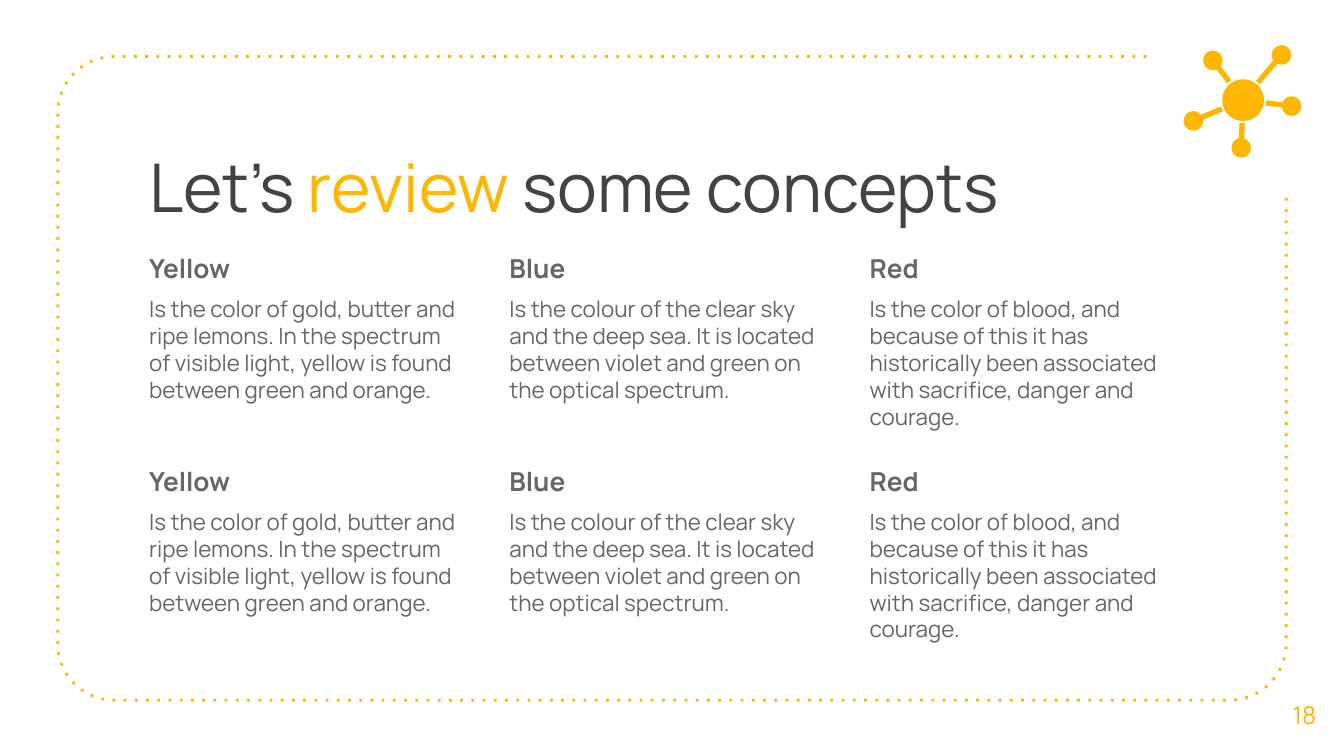
import copy
import math
from dataclasses import dataclass

import pptx
import pptx.dml.color
import pptx.enum.dml
import pptx.enum.text
import pptx.util
from lxml import etree

HUES = {"gold": "FFB600", "dark": "434343", "gray": "666666"}
FONT = "Manrope"
WIDE = pptx.util.Inches(10)
HIGH = WIDE * 9 // 16
CELL = WIDE // 100  # square grid, 100 columns across the slide

Point = tuple[float, float]


@dataclass
class Box:
    """A place in grid columns and rows."""
    col: float
    row: float
    cols: float
    rows: float


@dataclass
class Topic:
    name: str
    text: str


TOPICS = [
    Topic("Yellow", "Is the color of gold, butter and ripe lemons. In the spectrum "
          "of visible light, yellow is found between green and orange."),
    Topic("Blue", "Is the colour of the clear sky and the deep sea. It is located "
          "between violet and green on the optical spectrum."),
    Topic("Red", "Is the color of blood, and because of this it has historically "
          "been associated with sacrifice, danger and courage."),
]
HUB, HUB_R, GAP_R = (92.5, 7.45), 1.55, 1.72
NODES = [(95.35, 4.1), (90.25, 4.5), (88.8, 9), (92.35, 11), (96.1, 7.9)]
NODE_R, STEM = 0.72, 0.2


def tint(hue: str) -> pptx.dml.color.RGBColor:
    return pptx.dml.color.RGBColor.from_string(HUES[hue])


def place(shape, box: Box) -> None:
    shape.left, shape.top = int(box.col * CELL), int(box.row * CELL)
    shape.width, shape.height = int(box.cols * CELL), int(box.rows * CELL)


def setup(shape, box: Box, anchor: str = "TOP"):
    """Place a text shape and return its text frame."""
    place(shape, box)
    frame = shape.text_frame
    frame.word_wrap = True
    frame.auto_size = pptx.enum.text.MSO_AUTO_SIZE.NONE
    frame.vertical_anchor = pptx.enum.text.MSO_ANCHOR[anchor]
    frame.margin_left = frame.margin_right = CELL
    frame.margin_top = frame.margin_bottom = CELL
    return frame


def style(para, size: float, hue: str, bold: bool = False, align: str = "LEFT") -> None:
    para.alignment = pptx.enum.text.PP_ALIGN[align]
    font = para.font
    font.name, font.size, font.bold = FONT, pptx.util.Pt(size), bold
    font.color.rgb = tint(hue)


def arc(mid: Point, r: float, start: float, end: float, steps: int = 16) -> list[Point]:
    """Points on a circle, angles in radians clockwise from the right."""
    turns = [start + (end - start) * i / steps for i in range(steps + 1)]
    return [(mid[0] + r * math.cos(t), mid[1] + r * math.sin(t)) for t in turns]


def trace(slide, points: list[Point], close: bool = True):
    """Draw an outline through points given in grid units."""
    spots = [(x * CELL, y * CELL) for x, y in points]
    pen = slide.shapes.build_freeform(*spots[0])
    pen.add_line_segments(spots[1:], close=close)
    shape = pen.convert_to_shape()
    shape.shadow.inherit = False
    return shape


def blob(slide, points: list[Point]) -> None:
    shape = trace(slide, points)
    shape.fill.solid()
    shape.fill.fore_color.rgb = tint("gold")
    shape.line.fill.background()


def draw_frame(slide) -> None:
    left, top, right, base, r = 4.3, 4.2, 95.7, 52.1, 4.2
    half = math.pi / 2
    points = [(85.3, top)]
    points += arc((left + r, top + r), r, 3 * half, 2 * half)
    points += arc((left + r, base - r), r, 2 * half, half)
    points += arc((right - r, base - r), r, half, 0)
    points.append((right, 14.6))
    shape = trace(slide, points, close=False)
    shape.fill.background()
    shape.line.color.rgb = tint("gold")
    shape.line.width = pptx.util.Pt(1.5)
    shape.line.dash_style = pptx.enum.dml.MSO_LINE.ROUND_DOT
    shape._element.xpath(".//a:prstDash")[0].set("val", "dot")


def draw_node(slide, node: Point) -> None:
    """Draw a ball with a stem that stops short of the hub."""
    way = math.atan2(HUB[1] - node[1], HUB[0] - node[0])
    slit = math.asin(STEM / NODE_R)
    side = math.asin(STEM / GAP_R)
    ball = arc(node, NODE_R, way + slit, way + 2 * math.pi - slit, 48)
    back = way + math.pi
    blob(slide, ball + arc(HUB, GAP_R, back + side, back - side, 2))


def draw_title(slide) -> None:
    para = setup(slide.shapes.title, Box(10.1, 9.8, 75.1, 9.4)).paragraphs[0]
    style(para, 36, "dark")
    for text, hue in [("Let’s ", "dark"), ("review", "gold"), (" some concepts", "dark")]:
        run = para.add_run()
        run.text = text
        run.font.color.rgb = tint(hue)


def fill_topic(shape, topic: Topic, box: Box) -> None:
    frame = setup(shape, box)
    frame.text = f"{topic.name}\n{topic.text}"
    for para, size, bold in zip(frame.paragraphs, (14, 12), (True, False)):
        style(para, size, "gray", bold)
        para.space_before = pptx.util.Pt(6)
        props = para._p.get_or_add_pPr()
        props.set("marL", "0")
        props.set("indent", "0")
        etree.SubElement(props, pptx.oxml.ns.qn("a:buNone"))
        props.append(props.find(pptx.oxml.ns.qn("a:defRPr")))


def draw_topics(slide) -> None:
    body = slide.placeholders[1]
    for i in range(1, 2 * len(TOPICS)):
        twin = copy.deepcopy(body._element)
        twin.nvSpPr.cNvPr.set("id", str(100 + i))
        twin.nvSpPr.cNvPr.set("name", f"Topic {i + 1}")
        slide.shapes._spTree.append(twin)
    cells = [s for s in slide.placeholders if s.placeholder_format.idx == 1]
    for i, shape in enumerate(cells):
        row, col = divmod(i, len(TOPICS))
        fill_topic(shape, TOPICS[col], Box(10.1 + 26.8 * col, 17.8 + 15.83 * row, 25.5, 16.2))


def draw_number(slide) -> None:
    frame = setup(slide.shapes.add_textbox(0, 0, CELL, CELL), Box(94.1, 50.2, 5.9, 6), "MIDDLE")
    frame.text = "18"
    style(frame.paragraphs[0], 13, "gold", align="CENTER")


def main() -> None:
    deck = pptx.Presentation()
    deck.slide_width, deck.slide_height = WIDE, HIGH
    slide = deck.slides.add_slide(deck.slide_layouts[1])
    draw_frame(slide)
    draw_title(slide)
    draw_topics(slide)
    draw_number(slide)
    for node in NODES:
        draw_node(slide, node)
    blob(slide, arc(HUB, HUB_R, 0, 2 * math.pi, 64))
    deck.save("out.pptx")


if __name__ == "__main__":
    main()
